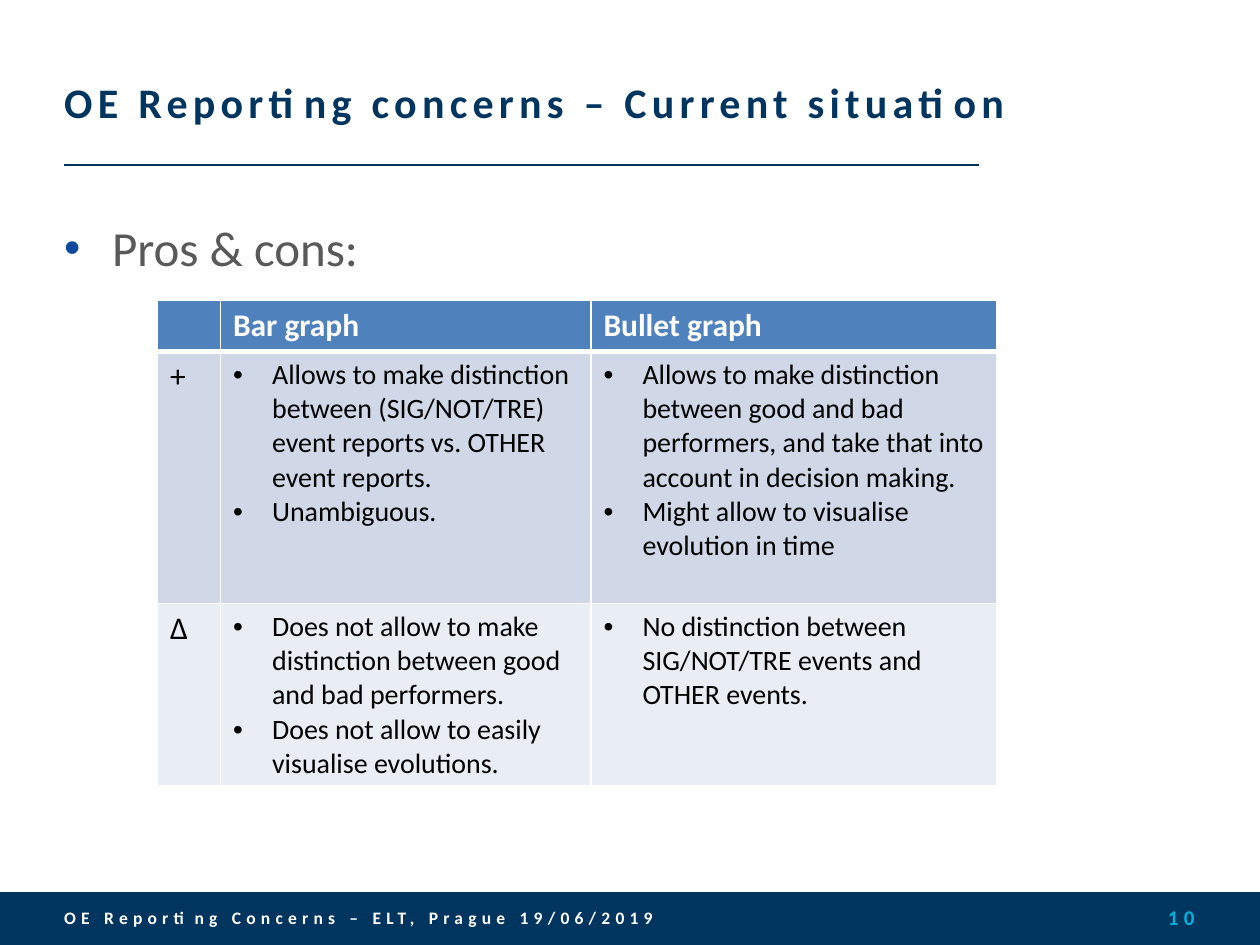
from dataclasses import dataclass

from lxml import etree
from pptx import Presentation
from pptx.dml.color import RGBColor
from pptx.enum.shapes import MSO_CONNECTOR, MSO_SHAPE
from pptx.enum.text import MSO_ANCHOR, PP_ALIGN
from pptx.oxml.ns import qn
from pptx.util import Inches, Pt

LEFT, RIGHT = PP_ALIGN.LEFT, PP_ALIGN.RIGHT
TOP, MIDDLE = MSO_ANCHOR.TOP, MSO_ANCHOR.MIDDLE
RECTANGLE, STRAIGHT = MSO_SHAPE.RECTANGLE, MSO_CONNECTOR.STRAIGHT
NAVY, CYAN, BLUE, WHITE, BLACK = "00355F", "00B3DC", "0D499C", "FFFFFF", "000000"
GREY, HEADER_BLUE = "595959", "4F81BD"
FONT = "Calibri"
MARGIN = 0.51


@dataclass
class Label:
    """A spaced bold line of text and its box."""
    text: str
    box: tuple[float, float, float, float]
    size: int
    color: str
    align: PP_ALIGN = LEFT


@dataclass
class TableRow:
    """A table row: its look and the paragraphs of each cell."""
    height: float
    fill: str
    color: str
    bold: bool
    cells: list[list[str]]


LABELS = [
    Label("OE Reporting Concerns – ELT, Prague 19/06/2019", (MARGIN, 7.07, 8.15, 0.42), 10, WHITE),
    Label("10", (8.66, 7.06, 0.82, 0.44), 12, CYAN, RIGHT),
    Label("OE Reporting concerns – Current situation", (MARGIN, 0.34, 7.59, 0.93), 24, NAVY),
]
COLUMNS = [0.5, 2.94, 3.22]
ROWS = [
    TableRow(0.41, HEADER_BLUE, WHITE, True, [[], ["Bar graph"], ["Bullet graph"]]),
    TableRow(2.0, "D0D8E8", BLACK, False, [
        ["+"],
        ["Allows to make distinction between (SIG/NOT/TRE) event reports vs. OTHER event reports.",
         "Unambiguous."],
        ["Allows to make distinction between good and bad performers, "
         "and take that into account in decision making.",
         "Might allow to visualise evolution in time"],
    ]),
    TableRow(1.45, "E9EDF4", BLACK, False, [
        ["Δ"],
        ["Does not allow to make distinction between good and bad performers.",
         "Does not allow to easily visualise evolutions."],
        ["No distinction between SIG/NOT/TRE events and OTHER events."],
    ]),
]


def rgb(color: str) -> RGBColor:
    """Turn a hex string into a colour."""
    return RGBColor.from_string(color)


def add_bullet(p, indent: float, color: str, percent: int) -> None:
    """Give a paragraph a hanging bullet."""
    pPr = p._p.get_or_add_pPr()
    pPr.set("marL", str(Inches(indent)))
    pPr.set("indent", str(-Inches(indent)))
    clr = etree.SubElement(pPr, qn("a:buClr"))
    etree.SubElement(clr, qn("a:srgbClr"), val=color)
    etree.SubElement(pPr, qn("a:buSzPct"), val=str(percent * 1000))
    etree.SubElement(pPr, qn("a:buFont"), typeface="Arial")
    etree.SubElement(pPr, qn("a:buChar"), char="•")


def write(tf, texts: list[str], *, size: int, color: str, bold: bool = False,
          align: PP_ALIGN = LEFT, spacing: int = 0, indent: float = 0,
          bullet_color: str = BLACK, bullet_percent: int = 100) -> None:
    """Write formatted paragraphs into a text frame."""
    for i, text in enumerate(texts):
        p = tf.add_paragraph() if i else tf.paragraphs[0]
        if indent:
            add_bullet(p, indent, bullet_color, bullet_percent)
        p.alignment = align
        r = p.add_run()
        r.text = text
        r.font.name, r.font.size, r.font.bold = FONT, Pt(size), bold
        r.font.color.rgb = rgb(color)
        if spacing:
            r.font._element.set("spc", str(spacing * 100))


def add_text(s, box: tuple[float, float, float, float], text: str,
             anchor: MSO_ANCHOR = TOP, **fmt) -> None:
    """Add a wrapped text box without insets."""
    tf = s.shapes.add_textbox(*map(Inches, box)).text_frame
    tf.word_wrap, tf.vertical_anchor = True, anchor
    tf.margin_left = tf.margin_right = tf.margin_top = tf.margin_bottom = 0
    write(tf, [text], **fmt)


def add_borders(cell, top: int, bottom: int) -> None:
    """Draw white borders of the given point widths around a cell."""
    tcPr = cell._tc.get_or_add_tcPr()
    for i, (side, width) in enumerate({"L": 1, "R": 1, "T": top, "B": bottom}.items()):
        ln = etree.Element(qn(f"a:ln{side}"), w=str(Pt(width)))
        fill = etree.SubElement(ln, qn("a:solidFill"))
        etree.SubElement(fill, qn("a:srgbClr"), val=WHITE)
        tcPr.insert(i, ln)


def add_comparison(s) -> None:
    """Add the table of pros and cons."""
    height = sum(row.height for row in ROWS)
    table = s.shapes.add_table(len(ROWS), len(COLUMNS), Inches(1.25), Inches(2.38),
                               Inches(sum(COLUMNS)), Inches(height)).table
    for column, width in zip(table.columns, COLUMNS):
        column.width = Inches(width)
    for i, row in enumerate(ROWS):
        table.rows[i].height = Inches(row.height)
        for j, texts in enumerate(row.cells):
            cell = table.cell(i, j)
            cell.fill.solid()
            cell.fill.fore_color.rgb = rgb(row.fill)
            add_borders(cell, 3 if i == 1 else 1, 3 if i == 0 else 1)
            listed = i > 0 and j > 0
            write(cell.text_frame, texts, size=16 if listed else 18, color=row.color,
                  bold=row.bold, indent=0.31 if listed else 0)


def add_frame(s) -> None:
    """Add the footer band and the rule under the title."""
    band = s.shapes.add_shape(RECTANGLE, 0, Inches(7.08), Inches(10), Inches(0.42))
    band.shadow.inherit = False
    band.fill.solid()
    band.fill.fore_color.rgb = rgb(NAVY)
    band.line.fill.background()
    rule = s.shapes.add_connector(STRAIGHT, Inches(MARGIN), Inches(1.31), Inches(7.77), Inches(1.31))
    rule.line.color.rgb = rgb(NAVY)
    rule.line.width = Pt(1)
    etree.SubElement(rule._element.spPr, qn("a:effectLst"))


def main() -> None:
    """Build and save the slide."""
    prs = Presentation()
    prs.slide_width, prs.slide_height = Inches(10), Inches(7.5)
    s = prs.slides.add_slide(prs.slide_layouts[6])
    add_frame(s)
    for label in LABELS:
        add_text(s, label.box, label.text, MIDDLE, size=label.size, color=label.color,
                 bold=True, align=label.align, spacing=3)
    add_text(s, (MARGIN, 1.73, 9.03, 0.64), "Pros & cons:", size=28, color=GREY,
             indent=0.38, bullet_color=BLUE, bullet_percent=95)
    add_comparison(s)
    prs.save("out.pptx")


if __name__ == "__main__":
    main()
